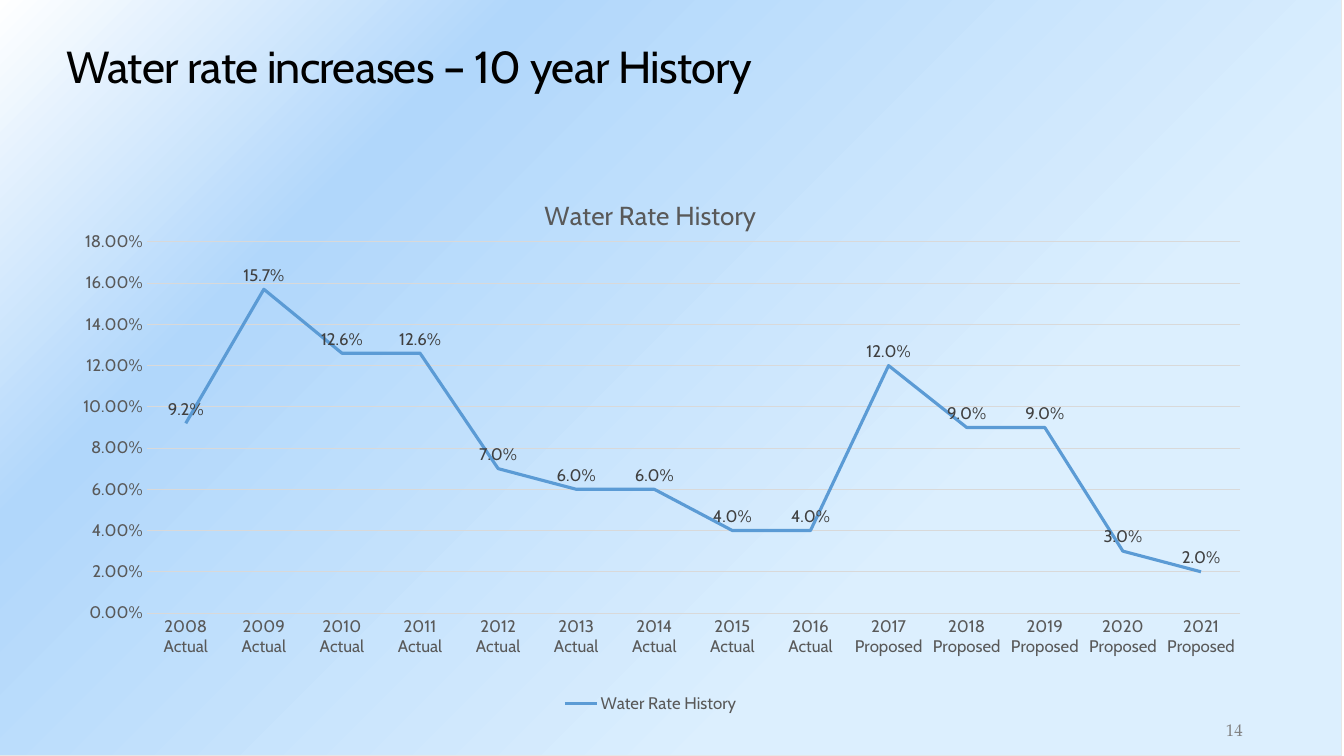
from pptx import Presentation
from pptx.chart.data import CategoryChartData
from pptx.dml.color import RGBColor
from pptx.enum.chart import XL_CHART_TYPE, XL_LABEL_POSITION, XL_LEGEND_POSITION, XL_TICK_MARK
from pptx.enum.shapes import MSO_SHAPE
from pptx.enum.text import MSO_ANCHOR, PP_ALIGN
from pptx.oxml import parse_xml
from pptx.oxml.ns import nsdecls
from pptx.util import Pt

BLACK = RGBColor(0x00, 0x00, 0x00)
GREY = RGBColor(0x80, 0x80, 0x80)
AXIS_GREY = RGBColor(0x59, 0x59, 0x59)
LABEL_GREY = RGBColor(0x40, 0x40, 0x40)
GRID_GREY = RGBColor(0xD9, 0xD9, 0xD9)
FRAME_GREY = RGBColor(0xE7, 0xE6, 0xE6)
LINE_BLUE = RGBColor(0x5B, 0x9B, 0xD5)
SKY_STOPS = [(30, RGBColor(0xDC, 0xEF, 0xFE)),
             (75, RGBColor(0xB1, 0xD7, 0xFB)),
             (100, RGBColor(0xFF, 0xFF, 0xFF))]
SANS = "Cabin"
SERIF = "TeX Gyre Pagella"
NO_TICK = XL_TICK_MARK.NONE


def set_font(font, size, color, name=SANS):
    font.size = Pt(size)
    font.bold = False
    font.name = name
    font.color.rgb = color


prs = Presentation()
prs.slide_width, prs.slide_height = Pt(960), Pt(540)
slide = prs.slides.add_slide(prs.slide_layouts[5])

# Gradient background, spreading from the bottom right corner
s = slide.shapes.add_shape(MSO_SHAPE.RECTANGLE, Pt(-1.44), 0, Pt(960), Pt(540))
s.shadow.inherit = False
s.line.color.rgb = FRAME_GREY
s.line.width = Pt(0.75)
s.fill.background()
stops = "".join(f'<a:gs pos="{pos * 1000}"><a:srgbClr val="{color}"/></a:gs>'
                for pos, color in SKY_STOPS)
gradient = parse_xml(
    f'<a:gradFill {nsdecls("a")} rotWithShape="1"><a:gsLst>{stops}</a:gsLst>'
    '<a:path path="circle"><a:fillToRect l="100000" t="100000"/></a:path></a:gradFill>')
no_fill = s.element.spPr.xpath("./a:noFill")[0]
no_fill.getparent().replace(no_fill, gradient)
slide.shapes.element.insert(2, s.element)

# Slide number
s = slide.shapes.add_textbox(Pt(848.9), Pt(510.5), Pt(65.5), Pt(21.6))
tf = s.text_frame
tf.word_wrap = True
tf.vertical_anchor = MSO_ANCHOR.BOTTOM
tf.margin_left = tf.margin_right = tf.margin_top = tf.margin_bottom = Pt(3.6)
tf.text = "14"
p = tf.paragraphs[0]
p.alignment = PP_ALIGN.CENTER
set_font(p.runs[0].font, 12, GREY, SERIF)

# Title
s = slide.shapes.title
s.left, s.top, s.width, s.height = Pt(40.3), Pt(23.8), Pt(879.8), Pt(90)
tf = s.text_frame
tf.text = "Water rate increases – 10 year History"
tf.vertical_anchor = MSO_ANCHOR.TOP
p = tf.paragraphs[0]
p.alignment = PP_ALIGN.LEFT
r = p.runs[0]
set_font(r.font, 32, BLACK)
r.font.element.set("spc", "-50") if hasattr(r.font, "element") else r._r.get_or_add_rPr().set("spc", "-50")

# Line chart
rates = [0.092, 0.157, 0.126, 0.126, 0.07, 0.06, 0.06,
         0.04, 0.04, 0.12, 0.09, 0.09, 0.03, 0.02]
data = CategoryChartData(number_format="0.00%")
data.categories = [f"{year} {'Actual' if year < 2017 else 'Proposed'}"
                   for year in range(2008, 2022)]
data.add_series("Water Rate History", rates)
chart = slide.shapes.add_chart(XL_CHART_TYPE.LINE, Pt(40.3), Pt(126),
                               Pt(848.9), Pt(386.6), data).chart
set_font(chart.font, 10, BLACK)

# Chart title and legend
chart.has_title = True
tf = chart.chart_title.text_frame
tf.text = "Water Rate History"
set_font(tf.paragraphs[0].runs[0].font, 18.6, AXIS_GREY)
chart.chart_title.include_in_layout = False
chart.has_legend = True
chart.legend.position = XL_LEGEND_POSITION.BOTTOM
chart.legend.include_in_layout = False
set_font(chart.legend.font, 12, AXIS_GREY)

# Axes and gridlines
rate_axis, year_axis = chart.value_axis, chart.category_axis
for axis in (rate_axis, year_axis):
    axis.major_tick_mark = axis.minor_tick_mark = NO_TICK
    set_font(axis.tick_labels.font, 12, AXIS_GREY)
rate_axis.minimum_scale, rate_axis.maximum_scale, rate_axis.major_unit = 0, 0.18, 0.02
rate_axis.tick_labels.number_format = "0.00%"
rate_axis.tick_labels.number_format_is_linked = False
rate_axis.format.line.fill.background()
for line in (rate_axis.major_gridlines.format.line, year_axis.format.line):
    line.color.rgb = GRID_GREY
    line.width = Pt(0.75)

# Series and data labels
plot = chart.plots[0]
plot.vary_by_categories = False
series = plot.series[0]
series.smooth = False
series.format.line.color.rgb = LINE_BLUE
series.format.line.width = Pt(2.25)
labels = series.data_labels
labels.show_value = True
labels.position = XL_LABEL_POSITION.ABOVE
labels.number_format = "0.0%"
labels.number_format_is_linked = False
set_font(labels.font, 12, LABEL_GREY)

# Inner plot area as fractions of the chart
plot_area = chart.element.xpath(".//c:plotArea")[0]
for old in plot_area.xpath("./c:layout"):
    plot_area.remove(old)
fractions = "".join(f'<c:{tag} val="{val}"/>' for tag, val in
                    [("x", 0.076), ("y", 0.121), ("w", 0.92), ("h", 0.686)])
plot_area.insert(0, parse_xml(
    f'<c:layout {nsdecls("c")}><c:manualLayout><c:layoutTarget val="inner"/>'
    f'<c:xMode val="edge"/><c:yMode val="edge"/>{fractions}</c:manualLayout></c:layout>'))

prs.save("out.pptx")
